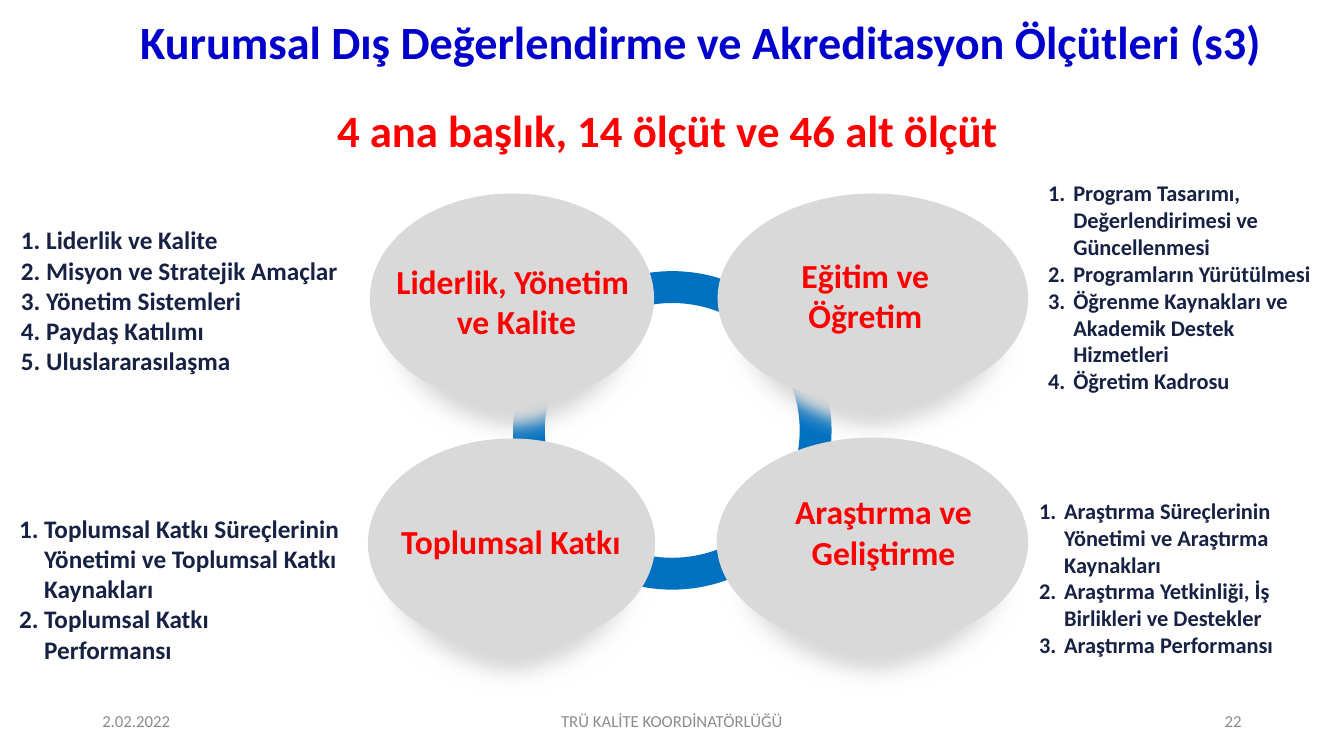
from dataclasses import dataclass

from lxml.etree import SubElement
from pptx import Presentation
from pptx.dml.color import RGBColor
from pptx.enum.shapes import MSO_SHAPE
from pptx.enum.text import MSO_ANCHOR, PP_ALIGN
from pptx.oxml.ns import qn
from pptx.shapes.autoshape import Shape
from pptx.slide import Slide
from pptx.util import Pt

FONT = "Calibri"
RED = "FF0000"
BLUE = "0000CC"
RING_BLUE = "0070C0"
NAVY = "172144"
GREY = "D9D9D9"
FOOTER_GREY = "8C8C8C"
LIST_INDENT = 18
ELLIPSE_HEIGHT = 149.8


@dataclass(frozen=True)
class Box:
    left: float
    top: float
    width: float
    height: float


@dataclass(frozen=True)
class TextBlock:
    box: Box
    lines: tuple[str, ...]
    size: float
    color: str
    bold: bool = True
    align: PP_ALIGN = PP_ALIGN.LEFT
    anchor: MSO_ANCHOR = MSO_ANCHOR.TOP
    wrap: bool = True
    numbered: bool = False
    fill: str | None = None


@dataclass(frozen=True)
class Topic:
    left: float
    top: float
    width: float
    label_box: Box
    lines: tuple[str, ...]
    wrap: bool = True
    label_fill: str | None = None


TOPICS = (
    Topic(264.2, 138.2, 203, Box(275, 182.2, 187.9, 65.5),
          ("Liderlik, Yönetim ", "ve Kalite"), wrap=False),
    Topic(512.6, 138.2, 221.8, Box(563, 177.8, 110.2, 65.5),
          ("Eğitim ve ", "Öğretim"), label_fill=GREY),
    Topic(262.8, 313.2, 205.2, Box(278.6, 368.6, 172.8, 36),
          ("Toplumsal Katkı",), wrap=False),
    Topic(511.9, 312.5, 222.5, Box(558.7, 347, 144.7, 65.5),
          ("Araştırma ve ", "Geliştirme")),
)

HEADINGS = (
    TextBlock(Box(75.6, 5.8, 850.3, 47.5),
              ("Kurumsal Dış Değerlendirme ve Akreditasyon Ölçütleri (s3)",),
              33, BLUE, align=PP_ALIGN.CENTER),
    TextBlock(Box(193, 69.8, 568, 46),
              ("4 ana başlık, 14 ölçüt ve 46 alt ölçüt",),
              32, RED, align=PP_ALIGN.CENTER),
)

CRITERIA = (
    TextBlock(Box(7.9, 157, 247.7, 138.2),
              ("Liderlik ve Kalite", "Misyon ve Stratejik Amaçlar", "Yönetim Sistemleri",
               "Paydaş Katılımı", "Uluslararasılaşma"), 18, NAVY, numbered=True),
    TextBlock(Box(741.6, 124.6, 218.2, 162.7),
              ("Program Tasarımı, Değerlendirimesi ve Güncellenmesi", "Programların Yürütülmesi",
               "Öğrenme Kaynakları ve Akademik Destek Hizmetleri", "Öğretim Kadrosu"),
              16, NAVY, numbered=True),
    TextBlock(Box(6.5, 362.9, 244.1, 138.2),
              ("Toplumsal Katkı Süreçlerinin Yönetimi ve Toplumsal Katkı Kaynakları",
               "Toplumsal Katkı Performansı"), 18, NAVY, numbered=True),
    TextBlock(Box(735.1, 351.4, 206.6, 146.2),
              ("Araştırma Süreçlerinin Yönetimi ve Araştırma Kaynakları",
               "Araştırma Yetkinliği, İş Birlikleri ve Destekler", "Araştırma Performansı"),
              16, NAVY, numbered=True),
)

FOOTERS = tuple(
    TextBlock(Box(left, 500.5, width, 28.75), (text,), 12, FOOTER_GREY, False,
              align, MSO_ANCHOR.MIDDLE)
    for left, width, text, align in (
        (66, 216, "2.02.2022", PP_ALIGN.LEFT),
        (318, 324, "TRÜ KALİTE KOORDİNATÖRLÜĞÜ", PP_ALIGN.CENTER),
        (678, 216, "22", PP_ALIGN.RIGHT),
    )
)


def color_of(value: str) -> RGBColor:
    return RGBColor.from_string(value)


def add_filled_shape(slide: Slide, kind: MSO_SHAPE, box: Box, fill: str) -> Shape:
    shape = slide.shapes.add_shape(
        kind, Pt(box.left), Pt(box.top), Pt(box.width), Pt(box.height))
    shape.shadow.inherit = False
    shape.fill.solid()
    shape.fill.fore_color.rgb = color_of(fill)
    shape.line.fill.background()
    return shape


def soften_edge(shape: Shape, radius: float) -> None:
    effects = shape.element.spPr.find(qn("a:effectLst"))
    SubElement(effects, qn("a:softEdge"), rad=str(int(Pt(radius))))


def add_text(slide: Slide, block: TextBlock) -> None:
    box = block.box
    if block.fill:
        shape = add_filled_shape(slide, MSO_SHAPE.RECTANGLE, box, block.fill)
    else:
        shape = slide.shapes.add_textbox(
            Pt(box.left), Pt(box.top), Pt(box.width), Pt(box.height))
    frame = shape.text_frame
    frame.word_wrap = block.wrap
    frame.vertical_anchor = block.anchor
    for index, line in enumerate(block.lines):
        paragraph = frame.add_paragraph() if index else frame.paragraphs[0]
        paragraph.alignment = block.align
        if block.numbered:
            properties = paragraph._p.get_or_add_pPr()
            properties.set("marL", str(int(Pt(LIST_INDENT))))
            properties.set("indent", str(-int(Pt(LIST_INDENT))))
            SubElement(properties, qn("a:buFont"), typeface="+mj-lt")
            SubElement(properties, qn("a:buAutoNum"), type="arabicPeriod")
        run = paragraph.add_run()
        run.text = line
        run.font.name = FONT
        run.font.size = Pt(block.size)
        run.font.bold = block.bold
        run.font.color.rgb = color_of(block.color)


def add_topic(slide: Slide, topic: Topic) -> None:
    left, top, width = topic.left, topic.top, topic.width
    back = add_filled_shape(
        slide, MSO_SHAPE.OVAL, Box(left, top + 34.2, width, ELLIPSE_HEIGHT), GREY)
    soften_edge(back, 18)
    middle = add_filled_shape(
        slide, MSO_SHAPE.OVAL, Box(left + 9.7, top + 15.8, width - 19.4, 157), GREY)
    soften_edge(middle, 12)
    add_filled_shape(slide, MSO_SHAPE.OVAL, Box(left, top, width, ELLIPSE_HEIGHT), GREY)
    add_text(slide, TextBlock(
        topic.label_box, topic.lines, 24, RED, align=PP_ALIGN.CENTER,
        anchor=MSO_ANCHOR.MIDDLE, wrap=topic.wrap, fill=topic.label_fill))


def main() -> None:
    presentation = Presentation()
    presentation.slide_width = Pt(960)
    presentation.slide_height = Pt(540)
    slide = presentation.slides.add_slide(presentation.slide_layouts[6])
    ring = add_filled_shape(slide, MSO_SHAPE.DONUT, Box(366.5, 193.7, 227.5, 227.5), RING_BLUE)
    ring.adjustments[0] = 0.1
    for topic in TOPICS:
        add_topic(slide, topic)
    for block in HEADINGS + CRITERIA + FOOTERS:
        add_text(slide, block)
    presentation.save("out.pptx")


if __name__ == "__main__":
    main()
